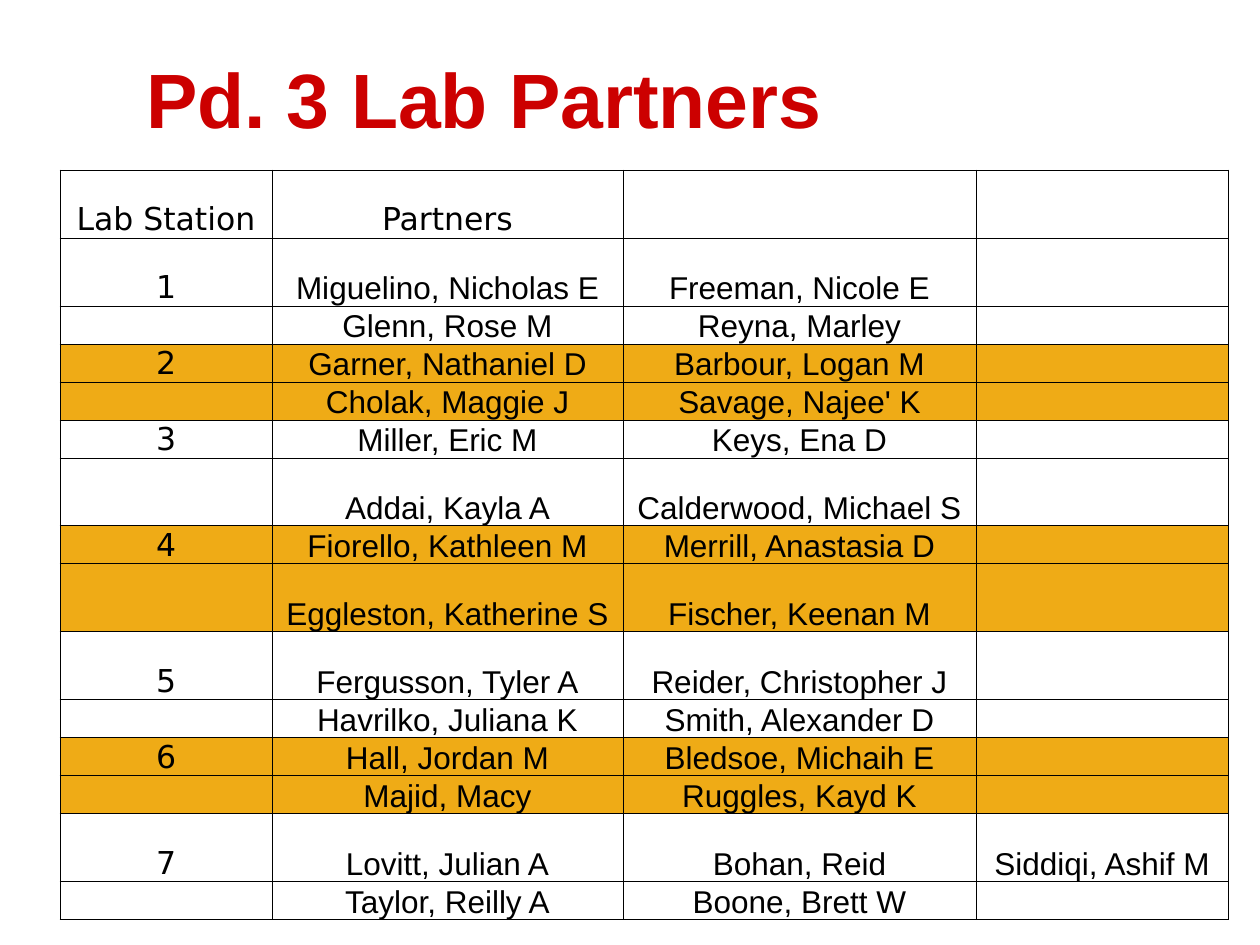
import dataclasses

import pptx
import pptx.dml.color
import pptx.enum.text
import pptx.oxml.ns
import pptx.util
from lxml import etree

EMU_PER_PX = 914400 / 126


@dataclasses.dataclass(frozen=True)
class Theme:
    title_color: str = "CC0000"
    text_color: str = "000000"
    border_color: str = "000000"
    plain_fill: str = "FFFFFF"
    band_fill: str = "EFAB16"
    name_font: str = "Arial"
    label_font: str = "DejaVu Sans"
    title_size: int = 44
    cell_size: int = 18
    border_width: float = 0.5


HEADER = ("Lab Station", "Partners")
STATIONS = (
    (("Miguelino, Nicholas E", "Freeman, Nicole E"),
     ("Glenn, Rose M", "Reyna, Marley")),
    (("Garner, Nathaniel D", "Barbour, Logan M"),
     ("Cholak, Maggie J", "Savage, Najee' K")),
    (("Miller, Eric M", "Keys, Ena D"),
     ("Addai, Kayla A", "Calderwood, Michael S")),
    (("Fiorello, Kathleen M", "Merrill, Anastasia D"),
     ("Eggleston, Katherine S", "Fischer, Keenan M")),
    (("Fergusson, Tyler A", "Reider, Christopher J"),
     ("Havrilko, Juliana K", "Smith, Alexander D")),
    (("Hall, Jordan M", "Bledsoe, Michaih E"),
     ("Majid, Macy", "Ruggles, Kayd K")),
    (("Lovitt, Julian A", "Bohan, Reid", "Siddiqi, Ashif M"),
     ("Taylor, Reilly A", "Boone, Brett W")),
)
COLUMN_WIDTHS = (212, 351, 353, 252)
TALL_ROWS = {0, 1, 6, 8, 9, 13}
TALL, SHORT = 68, 38


def px(length):
    return pptx.util.Emu(round(length * EMU_PER_PX))


def rgb(color):
    return pptx.dml.color.RGBColor.from_string(color)


def add_xml(parent, tag, **attributes):
    return etree.SubElement(parent, pptx.oxml.ns.qn(tag), attributes)


class SlideBuilder:
    def __init__(self, slide, theme):
        self.slide = slide
        self.theme = theme

    def text_run(self, paragraph, text, font, size, color, bold=False):
        run = paragraph.add_run()
        run.text = text
        run.font.name = font
        run.font.size = pptx.util.Pt(size)
        run.font.bold = bold
        run.font.color.rgb = rgb(color)

    def title(self, text, left, top, width, height):
        heading = self.slide.shapes.title
        heading.left, heading.top = px(left), px(top)
        heading.width, heading.height = px(width), px(height)
        frame = heading.text_frame
        frame.word_wrap = True
        frame.auto_size = pptx.enum.text.MSO_AUTO_SIZE.NONE
        frame.vertical_anchor = pptx.enum.text.MSO_ANCHOR.TOP
        frame.margin_left, frame.margin_top = px(10), px(14)
        paragraph = frame.paragraphs[0]
        paragraph.alignment = pptx.enum.text.PP_ALIGN.LEFT
        self.text_run(paragraph, text, self.theme.name_font,
                      self.theme.title_size, self.theme.title_color, bold=True)

    def borders(self, cell):
        properties = cell._tc.get_or_add_tcPr()
        width = str(pptx.util.Pt(self.theme.border_width))
        for side in "LRTB":
            line = add_xml(properties, f"a:ln{side}", w=width)
            add_xml(add_xml(line, "a:solidFill"), "a:srgbClr",
                    val=self.theme.border_color)

    def cell(self, cell, text, font, fill):
        self.borders(cell)
        cell.vertical_anchor = pptx.enum.text.MSO_ANCHOR.BOTTOM
        cell.margin_left = cell.margin_right = cell.margin_top = px(1)
        cell.margin_bottom = 0
        if fill:
            cell.fill.solid()
            cell.fill.fore_color.rgb = rgb(fill)
        else:
            cell.fill.background()
        paragraph = cell.text_frame.paragraphs[0]
        paragraph.alignment = pptx.enum.text.PP_ALIGN.CENTER
        if text:
            self.text_run(paragraph, text, font, self.theme.cell_size,
                          self.theme.text_color)
        else:
            # An empty cell keeps the type size, so that its row does not grow
            ending = add_xml(paragraph._p, "a:endParaRPr",
                             sz=str(self.theme.cell_size * 100))
            add_xml(ending, "a:latin", typeface=font)

    def partner_table(self, left, top):
        theme = self.theme
        rows = [(HEADER, False)]
        for number, pairs in enumerate(STATIONS, start=1):
            for label, names in zip((str(number), ""), pairs):
                rows.append(((label, *names), number % 2 == 0))
        heights = [TALL if i in TALL_ROWS else SHORT for i in range(len(rows))]
        table = self.slide.shapes.add_table(
            len(rows), len(COLUMN_WIDTHS), px(left), px(top),
            px(sum(COLUMN_WIDTHS)), px(sum(heights))).table
        table.first_row = table.horz_banding = False
        for column, width in zip(table.columns, COLUMN_WIDTHS):
            column.width = px(width)
        for r, (texts, banded) in enumerate(rows):
            table.rows[r].height = px(heights[r])
            for c in range(len(COLUMN_WIDTHS)):
                text = texts[c] if c < len(texts) else ""
                is_label = r == 0 or c == 0
                plain = theme.plain_fill if text and not is_label else None
                self.cell(table.cell(r, c), text,
                          theme.label_font if is_label and text
                          else theme.name_font,
                          theme.band_fill if banded else plain)


def main():
    deck = pptx.Presentation()
    deck.slide_width, deck.slide_height = px(1260), px(945)
    slide = deck.slides.add_slide(deck.slide_layouts[5])
    builder = SlideBuilder(slide, Theme())
    builder.title("Pd. 3 Lab Partners", 136, 38, 1092, 158)
    builder.partner_table(60, 170)
    deck.save("out.pptx")


if __name__ == "__main__":
    main()
